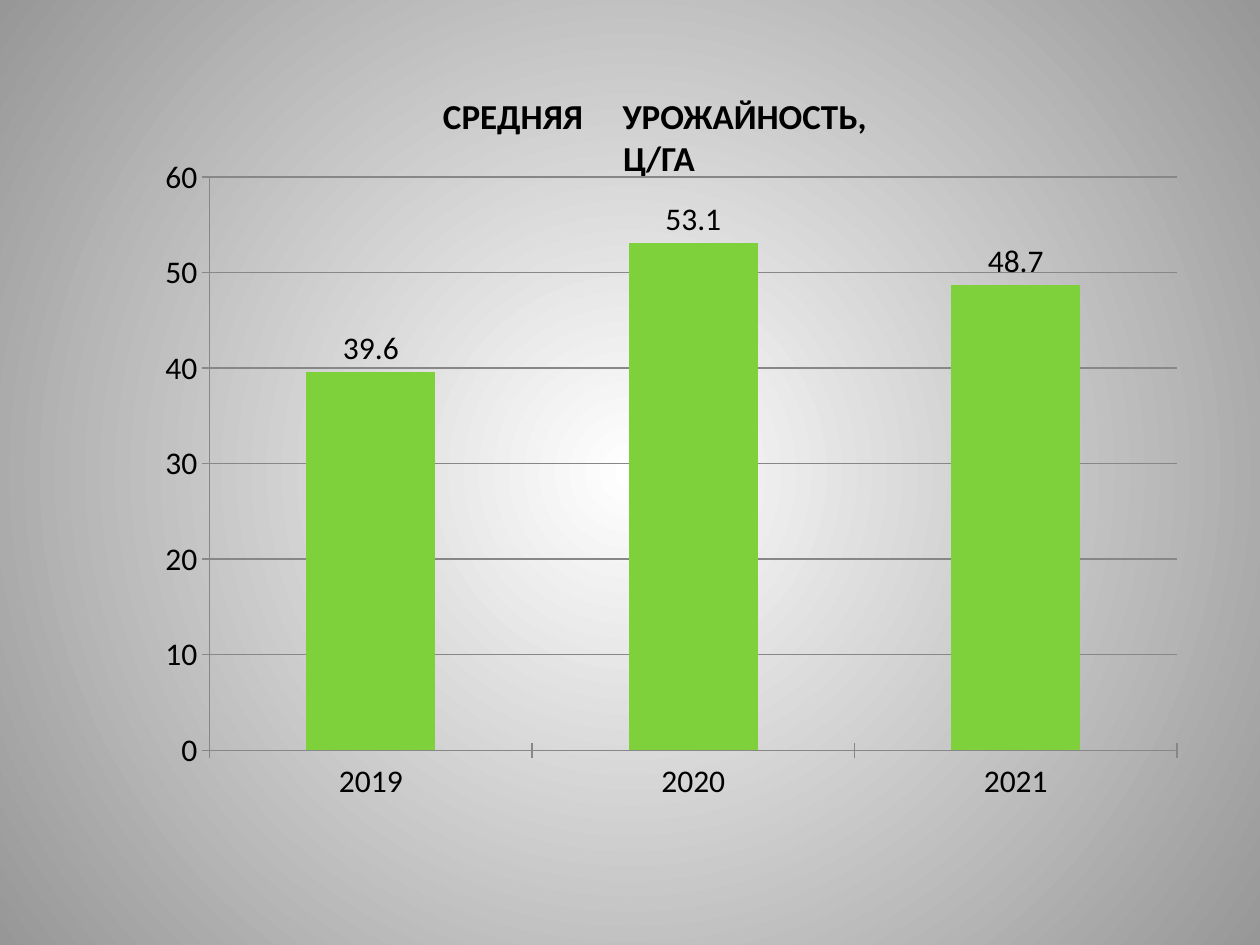
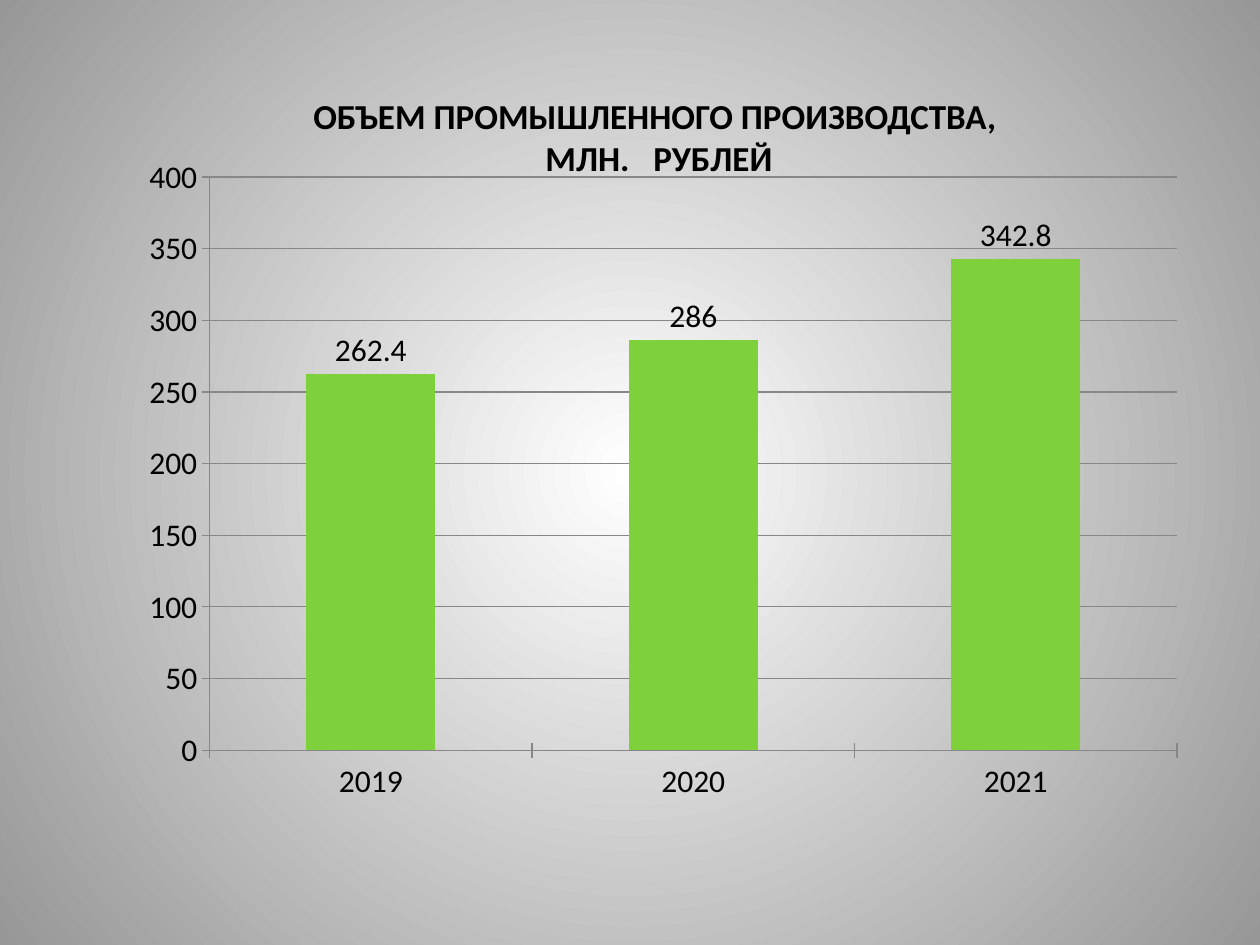
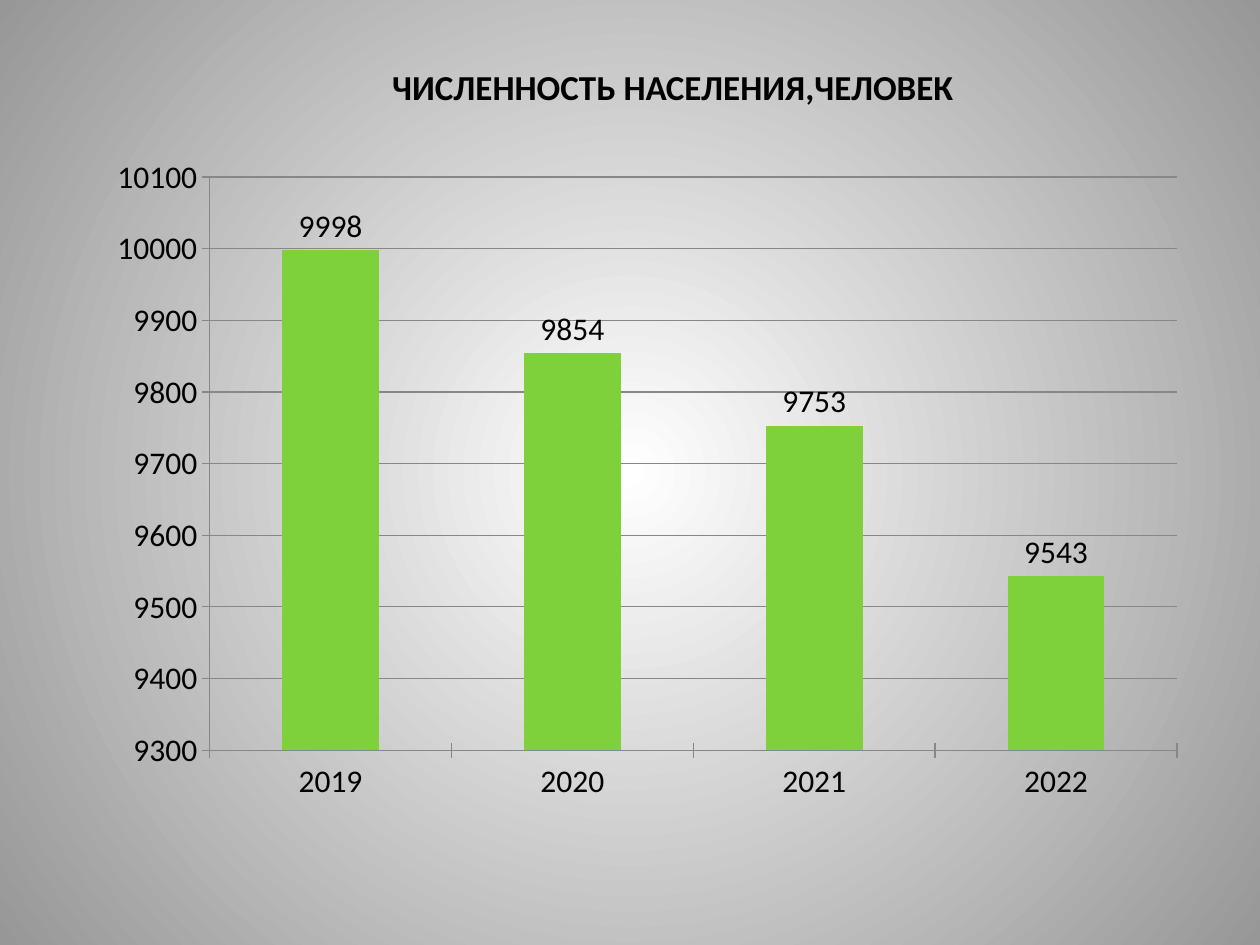
from dataclasses import dataclass

from lxml import etree
from pptx import Presentation
from pptx.chart.chart import Chart
from pptx.chart.data import CategoryChartData
from pptx.dml.color import RGBColor
from pptx.enum.chart import XL_CHART_TYPE, XL_LABEL_POSITION, XL_TICK_MARK
from pptx.enum.text import MSO_ANCHOR, MSO_AUTO_SIZE, PP_ALIGN
from pptx.oxml.ns import qn
from pptx.slide import Slide, SlideMaster
from pptx.util import Inches, Pt

COLUMNS = XL_CHART_TYPE.COLUMN_CLUSTERED
LABEL_ABOVE = XL_LABEL_POSITION.OUTSIDE_END
TICK_CROSS = XL_TICK_MARK.CROSS
CENTER = PP_ALIGN.CENTER
TOP = MSO_ANCHOR.TOP
FIT_SHAPE = MSO_AUTO_SIZE.SHAPE_TO_FIT_TEXT
TITLE_ONLY_LAYOUT = 5


@dataclass(frozen=True)
class Theme:
    font: str = "Calibri"
    title_size: Pt = Pt(20)
    chart_size: Pt = Pt(18)
    line_width: Pt = Pt(0.75)
    text: RGBColor = RGBColor(0x00, 0x00, 0x00)
    column: RGBColor = RGBColor(0x7F, 0xD1, 0x3B)
    grid: RGBColor = RGBColor(0x87, 0x87, 0x87)
    center: RGBColor = RGBColor(0xFF, 0xFF, 0xFF)
    edge: RGBColor = RGBColor(0x97, 0x97, 0x97)


@dataclass(frozen=True)
class Box:
    left: float
    top: float
    width: float
    height: float


@dataclass(frozen=True)
class TitleRun:
    text: str
    spacing: int = 0  # extra letter spacing, hundredths of a point


@dataclass(frozen=True)
class Scale:
    minimum: int
    maximum: int
    step: int


@dataclass(frozen=True)
class ChartSlide:
    title: tuple[tuple[TitleRun, ...], ...]
    title_box: Box
    values: tuple[float, ...]
    scale: Scale


THEME = Theme()
FIRST_YEAR = 2019
CHART_BOX = Box(0.47, 1.09, 8.98, 5.63)
PLOT_SHARES = {"x": 0.133, "y": 0.056, "w": 0.855, "h": 0.808}
TWO_LINE_TITLE = Box(1.56, 0.7, 7.34, 0.77)
ONE_LINE_TITLE = Box(1.64, 0.47, 7.34, 0.44)

SLIDES = (
    ChartSlide(
        ((TitleRun("СРЕДНЯЯ"), TitleRun(" ", 1800), TitleRun("УРОЖАЙНОСТЬ, ")),
         (TitleRun("Ц/ГА"),)),
        TWO_LINE_TITLE, (39.6, 53.1, 48.7), Scale(0, 60, 10)),
    ChartSlide(
        ((TitleRun("ОБЪЕМ ПРОМЫШЛЕННОГО ПРОИЗВОДСТВА, "),),
         (TitleRun("МЛН."), TitleRun(" ", 900), TitleRun("РУБЛЕЙ"))),
        TWO_LINE_TITLE, (262.4, 286, 342.8), Scale(0, 400, 50)),
    ChartSlide(
        ((TitleRun(" ЧИСЛЕННОСТЬ НАСЕЛЕНИЯ,ЧЕЛОВЕК"),),),
        ONE_LINE_TITLE, (9998, 9854, 9753, 9543), Scale(9300, 10100, 100)),
)


def set_background(master: SlideMaster) -> None:
    """Fill the master with a circular gradient, light in the middle."""
    fill = master.background.fill
    fill.gradient()
    for stop, color in zip(fill.gradient_stops, (THEME.center, THEME.edge)):
        stop.color.rgb = color
    gradient = next(master.element.iter(qn("a:gradFill")))
    linear = gradient.find(qn("a:lin"))
    if linear is not None:
        gradient.remove(linear)
    circle = etree.SubElement(gradient, qn("a:path"), {"path": "circle"})
    etree.SubElement(circle, qn("a:fillToRect"), dict.fromkeys("ltrb", "50000"))


def add_title(slide: Slide, content: ChartSlide) -> None:
    """Place the bold centred title, run by run."""
    title, box = slide.shapes.title, content.title_box
    title.left, title.top = Inches(box.left), Inches(box.top)
    title.width, title.height = Inches(box.width), Inches(box.height)
    frame = title.text_frame
    frame.word_wrap = True
    frame.auto_size = FIT_SHAPE
    frame.vertical_anchor = TOP
    for index, line in enumerate(content.title):
        paragraph = frame.add_paragraph() if index else frame.paragraphs[0]
        paragraph.alignment = CENTER
        for part in line:
            run = paragraph.add_run()
            run.text = part.text
            run.font.name = THEME.font
            run.font.size = THEME.title_size
            run.font.bold = True
            run.font.color.rgb = THEME.text
            if part.spacing:
                run._r.get_or_add_rPr().set("spc", str(part.spacing))


def set_plot_area(chart: Chart) -> None:
    """Fix the inner plot area as shares of the chart."""
    plot_area = next(chart.element.iter(qn("c:plotArea")))
    for old_layout in plot_area.findall(qn("c:layout")):
        plot_area.remove(old_layout)
    layout = etree.Element(qn("c:layout"))
    manual = etree.SubElement(layout, qn("c:manualLayout"))
    settings = {"layoutTarget": "inner", "xMode": "edge", "yMode": "edge", **PLOT_SHARES}
    for name, value in settings.items():
        etree.SubElement(manual, qn(f"c:{name}"), {"val": str(value)})
    plot_area.insert(0, layout)


def add_column_chart(slide: Slide, content: ChartSlide) -> None:
    """Draw the yearly values as labelled columns."""
    data = CategoryChartData()
    data.categories = [str(FIRST_YEAR + index) for index in range(len(content.values))]
    data.add_series("Series 1", content.values)
    box = CHART_BOX
    chart = slide.shapes.add_chart(
        COLUMNS, Inches(box.left), Inches(box.top),
        Inches(box.width), Inches(box.height), data).chart
    chart.has_title = False
    chart.has_legend = False
    chart.font.name = THEME.font
    chart.font.size = THEME.chart_size
    chart.font.color.rgb = THEME.text
    set_plot_area(chart)

    # Columns and their labels
    plot = chart.plots[0]
    plot.vary_by_categories = False
    plot.gap_width = 150
    fill = plot.series[0].format.fill
    fill.solid()
    fill.fore_color.rgb = THEME.column
    plot.has_data_labels = True
    plot.data_labels.show_value = True
    plot.data_labels.position = LABEL_ABOVE

    # Axes and gridlines
    value_axis, scale = chart.value_axis, content.scale
    value_axis.minimum_scale = scale.minimum
    value_axis.maximum_scale = scale.maximum
    value_axis.major_unit = scale.step
    value_axis.has_major_gridlines = True
    for axis in (chart.category_axis, value_axis):
        axis.major_tick_mark = TICK_CROSS
    for lined in (chart.category_axis, value_axis, value_axis.major_gridlines):
        lined.format.line.color.rgb = THEME.grid
        lined.format.line.width = THEME.line_width


def main() -> None:
    presentation = Presentation()
    presentation.slide_width = Inches(10)
    presentation.slide_height = Inches(7.5)
    set_background(presentation.slide_master)
    layout = presentation.slide_layouts[TITLE_ONLY_LAYOUT]
    for content in SLIDES:
        slide = presentation.slides.add_slide(layout)
        add_title(slide, content)
        add_column_chart(slide, content)
    presentation.save("out.pptx")


if __name__ == "__main__":
    main()
